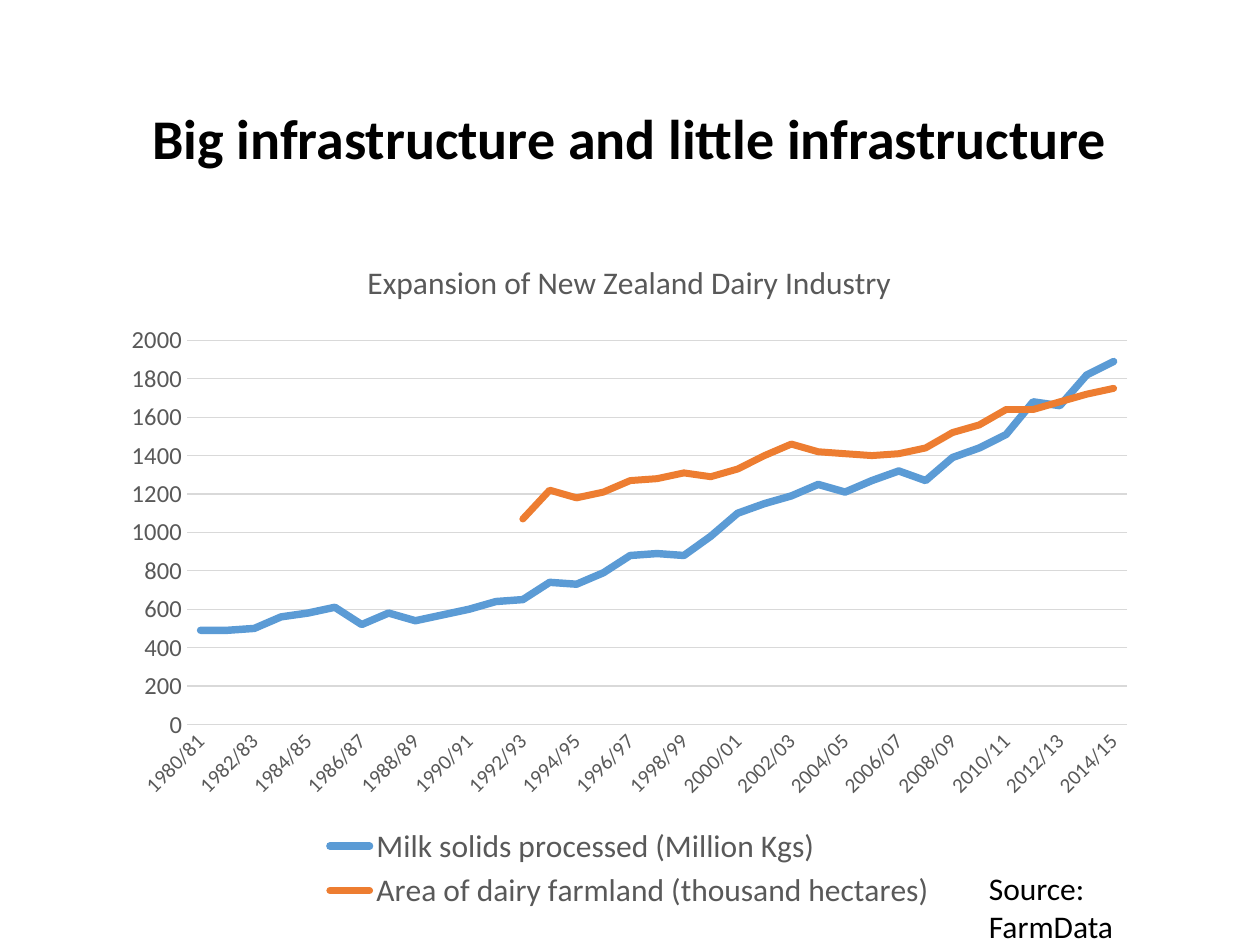
"""Build a slide charting the growth of dairy production and farmland."""
from pptx import Presentation
from pptx.chart.data import CategoryChartData
from pptx.dml.color import RGBColor
from pptx.enum.chart import XL_CHART_TYPE, XL_LEGEND_POSITION, XL_TICK_MARK
from pptx.enum.text import MSO_ANCHOR, PP_ALIGN
from pptx.util import Inches, Pt

TITLE = "Big infrastructure and little infrastructure"
CHART_TITLE = "Expansion of New Zealand Dairy Industry"
SOURCE = "Source: FarmData"
FONT, BLACK, GRAY, GRID = "Calibri", "000000", "595959", "D9D9D9"
FIRST_YEAR, LAST_YEAR, FIRST_AREA_YEAR = 1980, 2014, 1992
MILK = [490, 490, 500, 560, 580, 610, 520, 580, 540, 570, 600, 640,
        650, 740, 730, 790, 880, 890, 880, 980, 1100, 1150, 1190, 1250,
        1210, 1270, 1320, 1270, 1390, 1440, 1510, 1680, 1660, 1820, 1890]
AREA = [1070, 1220, 1180, 1210, 1270, 1280, 1310, 1290, 1330, 1400, 1460, 1420,
        1410, 1400, 1410, 1440, 1520, 1560, 1640, 1640, 1680, 1720, 1750]
SERIES = [
    ("Milk solids processed (Million Kgs)", MILK, "5B9BD5", 4.25),
    ("Area of dairy farmland (thousand hectares)",
     [None] * (FIRST_AREA_YEAR - FIRST_YEAR) + AREA, "ED7D31", 4),
]


def color(hex_code):
    return RGBColor.from_string(hex_code)


def style_font(font, size, hex_code, bold=False):
    font.name, font.size, font.bold = FONT, Pt(size), bold
    font.color.rgb = color(hex_code)


def style_line(line, hex_code, width):
    line.color.rgb = color(hex_code)
    line.width = Pt(width)


def season(year):
    return "1999/2000" if year == 1999 else f"{year}/{(year + 1) % 100:02d}"


def add_title(page):
    title = page.shapes.title
    title.left, title.top = Inches(0.69), Inches(0.4)
    title.width, title.height = Inches(8.62), Inches(1.45)
    title.text_frame.vertical_anchor = MSO_ANCHOR.MIDDLE
    para = title.text_frame.paragraphs[0]
    para.alignment, para.line_spacing = PP_ALIGN.CENTER, 0.9
    span = para.add_run()
    span.text = TITLE
    style_font(span.font, 32, BLACK, bold=True)


def add_source(page):
    box = page.shapes.add_textbox(Inches(7.75), Inches(6.85), Inches(1.93), Inches(0.4))
    box.text_frame.word_wrap = True
    span = box.text_frame.paragraphs[0].add_run()
    span.text = SOURCE
    style_font(span.font, 18, BLACK)


def add_dairy_chart(page):
    data = CategoryChartData()
    data.categories = [season(year) for year in range(FIRST_YEAR, LAST_YEAR + 1)]
    for name, values, _, _ in SERIES:
        data.add_series(name, values)
    chart = page.shapes.add_chart(
        XL_CHART_TYPE.LINE, Inches(0.88), Inches(1.86), Inches(8.23), Inches(5.41), data).chart
    style_font(chart.font, 10, BLACK)

    chart.has_title = True
    span = chart.chart_title.text_frame.paragraphs[0].add_run()
    span.text = CHART_TITLE
    style_font(span.font, 18, GRAY)
    chart.chart_title.include_in_layout = False

    chart.has_legend = True
    chart.legend.position = XL_LEGEND_POSITION.BOTTOM
    chart.legend.include_in_layout = False
    style_font(chart.legend.font, 18, GRAY)

    years, amounts = chart.category_axis, chart.value_axis
    for axis, size in ((years, 12), (amounts, 14)):
        axis.major_tick_mark = axis.minor_tick_mark = XL_TICK_MARK.NONE
        style_font(axis.tick_labels.font, size, GRAY)
    style_line(years.format.line, GRID, 0.75)
    years._element.txPr.bodyPr.set("rot", "-2700000")
    amounts.minimum_scale, amounts.maximum_scale, amounts.major_unit = 0, 2000, 200
    amounts.format.line.fill.background()
    style_line(amounts.major_gridlines.format.line, GRID, 0.75)

    chart.plots[0].vary_by_categories = False
    for series, (_, _, hex_code, width) in zip(chart.plots[0].series, SERIES):
        series.smooth = False
        style_line(series.format.line, hex_code, width)
        series.format.line._get_or_add_ln().set("cap", "rnd")


def main():
    deck = Presentation()
    deck.slide_width, deck.slide_height = Inches(10), Inches(7.5)
    page = deck.slides.add_slide(deck.slide_layouts[5])
    add_source(page)
    add_dairy_chart(page)
    add_title(page)
    deck.save("out.pptx")


if __name__ == "__main__":
    main()
